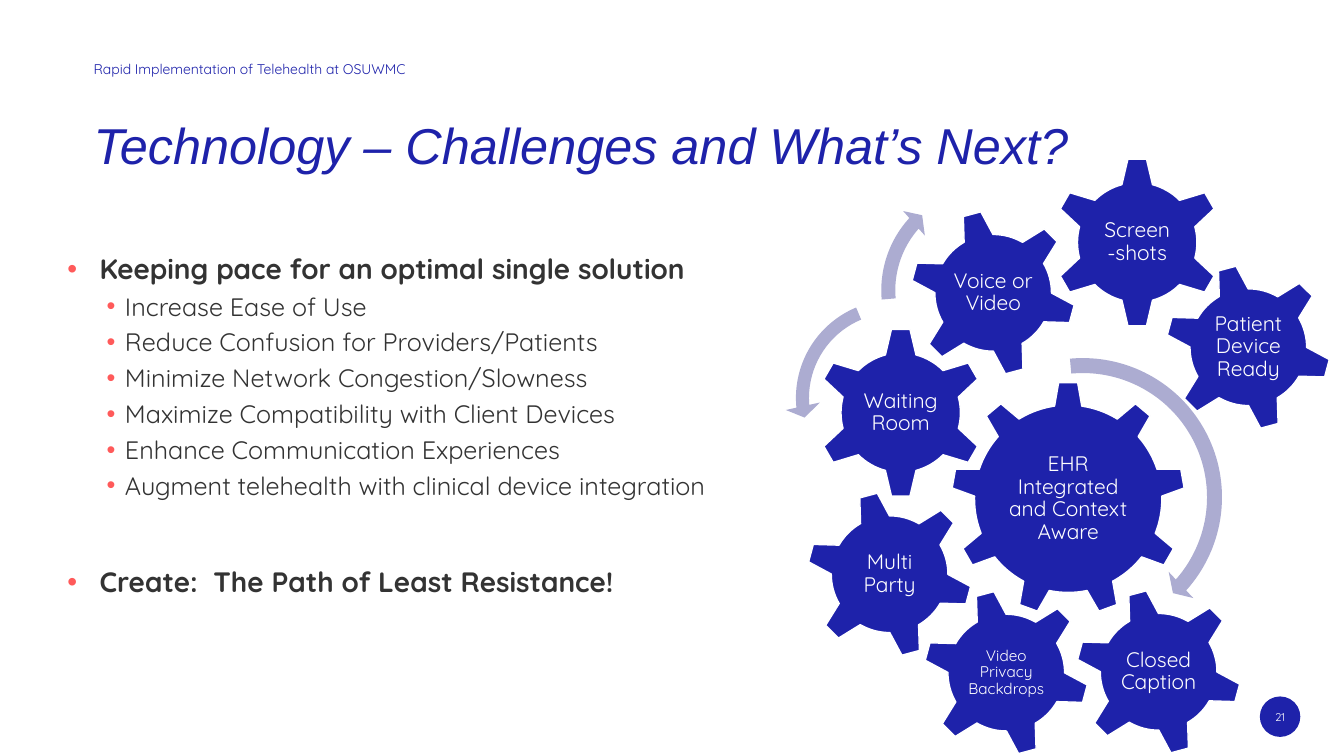
from lxml import etree
from pptx import Presentation
from pptx.dml.color import RGBColor
from pptx.enum.shapes import MSO_SHAPE
from pptx.enum.text import MSO_ANCHOR, MSO_AUTO_SIZE, PP_ALIGN
from pptx.oxml.ns import qn
from pptx.util import Cm, Pt

BLUE = RGBColor(0x1E, 0x22, 0xAA)
LILAC = RGBColor(0xAC, 0xAC, 0xD1)
CORAL = RGBColor(0xFF, 0x5A, 0x5A)
DARK = RGBColor(0x33, 0x33, 0x33)
WHITE = RGBColor(0xFF, 0xFF, 0xFF)
BODY_FONT = "Quicksand"
TITLE_FONT = "Arial"

LEFT, CENTER = PP_ALIGN.LEFT, PP_ALIGN.CENTER
TOP, MIDDLE = MSO_ANCHOR.TOP, MSO_ANCHOR.MIDDLE
NO_AUTOFIT = MSO_AUTO_SIZE.NONE
OVAL = MSO_SHAPE.OVAL
GEAR_6, GEAR_9 = MSO_SHAPE.GEAR_6, MSO_SHAPE.GEAR_9
ARC, LEFT_ARC = MSO_SHAPE.CIRCULAR_ARROW, MSO_SHAPE.LEFT_CIRCULAR_ARROW

# Gear kinds: preset, diameter, label width and height (cm), rotation
HUB = (GEAR_9, 5.9, 3.53, 3.02, 0)
STRAIGHT = (GEAR_6, 4.3, 2.13, 2.11, 0)
TILTED = (GEAR_6, 4.2, 2.29, 2.36, -15)

# Label, kind, centre x and y (cm), text size
GEARS = [
    ("EHR Integrated and Context Aware", HUB, 26.92, 12.57, 15),
    ("Waiting Room", STRAIGHT, 22.7, 10.4, 15),
    ("Voice or Video", TILTED, 25.03, 7.38, 15),
    ("Screen -shots", STRAIGHT, 28.66, 6.11, 15),
    ("Patient Device Ready", TILTED, 31.46, 8.75, 15),
    ("Video Privacy Backdrops", TILTED, 25.36, 16.95, 11),
    ("Multi Party", TILTED, 22.42, 14.47, 15),
    ("Closed Caption", TILTED, 29.2, 16.93, 15),
]

# Preset, centre x and y, diameter (cm), adjustments
ARROWS = [
    (ARC, 27.29, 12.53, 7.54, (0.05, 2.99, 25.08, 158.8, 0.06)),
    (LEFT_ARC, 22.53, 10.03, 5.49, (0.06, 4.3, 104.89, 148.38, 0.08)),
    (ARC, 24.92, 7.32, 5.89, (0.06, 3.94, 133.14, 105.08, 0.07)),
]

GOAL = "Keeping pace for an optimal single solution"
STEPS = [
    "Increase Ease of Use",
    "Reduce Confusion for Providers/Patients",
    "Minimize Network Congestion/Slowness",
    "Maximize Compatibility with Client Devices",
    "Enhance Communication Experiences",
    "Augment telehealth with clinical device integration",
]
CALL = "Create:  The Path of Least Resistance!"


def place(shape, left, top, width, height):
    shape.left, shape.top = Cm(left), Cm(top)
    shape.width, shape.height = Cm(width), Cm(height)


def set_frame(frame, anchor, margin=0):
    frame.word_wrap = True
    frame.auto_size = NO_AUTOFIT
    frame.vertical_anchor = anchor
    frame.margin_left = frame.margin_right = Cm(margin)
    frame.margin_top = frame.margin_bottom = Cm(margin)


def style(paragraph, size, color, font=BODY_FONT, bold=False, italic=False):
    paragraph.font.name = font
    paragraph.font.size = Pt(size)
    paragraph.font.color.rgb = color
    paragraph.font.bold = bold
    paragraph.font.italic = italic


def add_label(slide, text, box, size, color, align, anchor, spacing, margin=0):
    label = slide.shapes.add_textbox(*map(Cm, box))
    set_frame(label.text_frame, anchor, margin)
    paragraph = label.text_frame.paragraphs[0]
    paragraph.text = text
    paragraph.alignment = align
    paragraph.line_spacing = spacing
    style(paragraph, size, color)


def add_round(slide, preset, x, y, diameter, color):
    """Add a filled shape of equal width and height around a centre."""
    shape = slide.shapes.add_shape(
        preset, Cm(x - diameter / 2), Cm(y - diameter / 2),
        Cm(diameter), Cm(diameter))
    shape.shadow.inherit = False
    shape.fill.solid()
    shape.fill.fore_color.rgb = color
    shape.line.fill.background()
    return shape


def add_gear(slide, text, kind, x, y, size):
    preset, diameter, width, height, rotation = kind
    gear = add_round(slide, preset, x, y, diameter, BLUE)
    gear.rotation = rotation
    gear.line.color.rgb = WHITE
    gear.line.width = Pt(1)
    box = (x - width / 2, y - height / 2, width, height)
    add_label(slide, text, box, size, WHITE, CENTER, MIDDLE, 0.9, 0.05)


def add_arrow(slide, preset, x, y, diameter, adjustments):
    arrow = add_round(slide, preset, x, y, diameter, LILAC)
    for index, value in enumerate(adjustments):
        arrow.adjustments[index] = value


def set_bullet(paragraph, indent, hanging):
    properties = paragraph._p.get_or_add_pPr()
    properties.set("marL", str(Cm(indent)))
    properties.set("indent", str(-Cm(hanging)))
    bullet_color = etree.SubElement(properties, qn("a:buClr"))
    etree.SubElement(bullet_color, qn("a:srgbClr"), val=str(CORAL))
    etree.SubElement(properties, qn("a:buFont"), typeface=TITLE_FONT)
    etree.SubElement(properties, qn("a:buChar"), char="•")


def fill_list(body):
    place(body, 1.7, 5.92, 20.8, 10.36)
    frame = body.text_frame
    set_frame(frame, TOP)
    # Text, level, space before
    items = [(GOAL, 0, 0), *((step, 1, 4) for step in STEPS), (CALL, 0, 34)]
    for index, (text, level, space) in enumerate(items):
        paragraph = frame.add_paragraph() if index else frame.paragraphs[0]
        paragraph.text = text
        paragraph.level = level
        paragraph.alignment = LEFT
        paragraph.space_before = Pt(space)
        paragraph.line_spacing = 1.0 if level else 1.5
        set_bullet(paragraph, *((1.45, 0.46) if level else (0.81, 0.81)))
        style(paragraph, 18 if level else 20, DARK, bold=not level)


def fill_title(title):
    place(title, 2.36, 3.23, 27.3, 2.84)
    set_frame(title.text_frame, TOP)
    paragraph = title.text_frame.paragraphs[0]
    paragraph.text = "Technology – Challenges and What’s Next?"
    paragraph.alignment = LEFT
    paragraph.line_spacing = 0.75
    style(paragraph, 36, BLUE, TITLE_FONT, italic=True)


def main():
    deck = Presentation()
    deck.slide_width, deck.slide_height = Cm(33.87), Cm(19.05)
    slide = deck.slides.add_slide(deck.slide_layouts[1])

    # Page number and running header
    add_round(slide, OVAL, 32.26, 18.06, 1.02, BLUE)
    add_label(slide, "21", (31.55, 17.75, 1.42, 0.64), 8, WHITE,
              CENTER, MIDDLE, 1.0)
    add_label(slide, "Rapid Implementation of Telehealth at OSUWMC",
              (2.36, 1.63, 15.29, 0.71), 10, BLUE, LEFT, TOP, 0.75)

    # Title and list
    fill_title(slide.shapes.title)
    fill_list(slide.placeholders[1])

    # Gears and the arrows of their motion
    for gear in GEARS:
        add_gear(slide, *gear)
    for arrow in ARROWS:
        add_arrow(slide, *arrow)

    deck.save("out.pptx")


if __name__ == "__main__":
    main()
